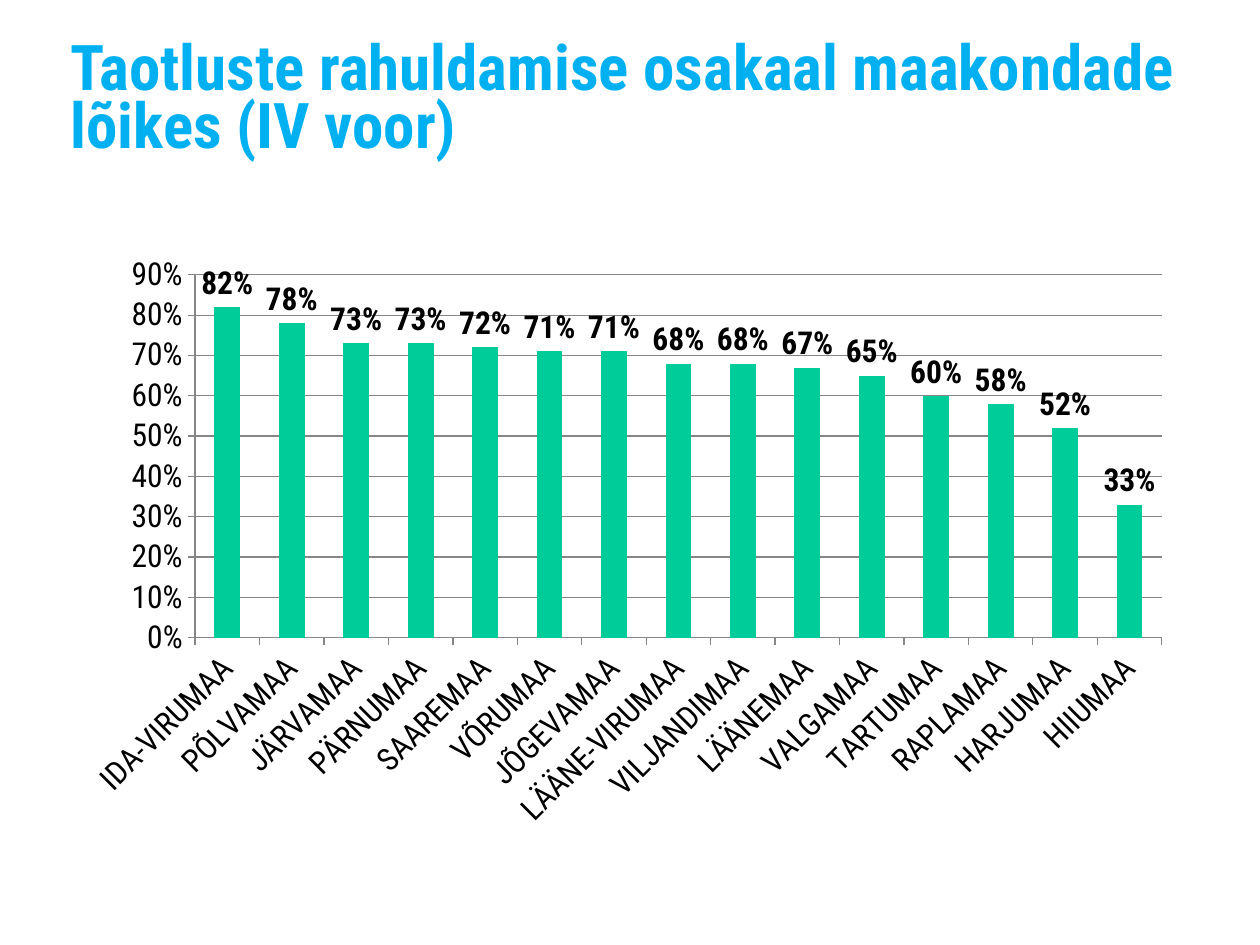
from pptx import Presentation
from pptx.chart.data import CategoryChartData
from pptx.dml.color import RGBColor
from pptx.enum.chart import XL_CHART_TYPE, XL_LABEL_POSITION, XL_TICK_MARK
from pptx.enum.text import MSO_ANCHOR
from pptx.util import Cm, Pt


def colour(hex_code):
    return RGBColor.from_string(hex_code)


class SlideBuilder:
    """Holds the style and the current slide."""

    font_name = "Roboto Condensed"
    heading_colour = "00B0F0"
    text_colour = "000000"
    bar_colour = "00CC99"
    line_colour = "868686"

    def __init__(self, slide):
        self.slide = slide

    def style_font(self, font, size, hex_code, bold=False):
        font.name = self.font_name
        font.size = Pt(size)
        font.bold = bold
        font.color.rgb = colour(hex_code)

    def heading(self, text, left, top, width, height):
        frame = self.slide.shapes.add_textbox(Cm(left), Cm(top), Cm(width), Cm(height)).text_frame
        frame.word_wrap = True
        frame.vertical_anchor = MSO_ANCHOR.MIDDLE
        frame.margin_left = frame.margin_right = frame.margin_top = frame.margin_bottom = 0
        paragraph = frame.paragraphs[0]
        paragraph.text = text
        paragraph.line_spacing = 0.77
        self.style_font(paragraph.font, 36, self.heading_colour, bold=True)

    def style_axis(self, axis):
        axis.major_tick_mark = XL_TICK_MARK.OUTSIDE
        axis.minor_tick_mark = XL_TICK_MARK.NONE
        axis.format.line.color.rgb = colour(self.line_colour)
        self.style_font(axis.tick_labels.font, 18, self.text_colour)

    def column_chart(self, shares, left, top, width, height):
        data = CategoryChartData(number_format="0%")
        data.categories = shares.keys()
        data.add_series("Series 1", [percent / 100 for percent in shares.values()])
        chart = self.slide.shapes.add_chart(
            XL_CHART_TYPE.COLUMN_CLUSTERED, Cm(left), Cm(top), Cm(width), Cm(height), data
        ).chart
        chart.has_legend = False
        chart.has_title = False
        self.style_font(chart.font, 18, self.text_colour)

        counties, scale = chart.category_axis, chart.value_axis
        for axis in (counties, scale):
            self.style_axis(axis)
        counties._element.txPr.bodyPr.set("rot", "-2700000")
        scale.minimum_scale, scale.maximum_scale, scale.major_unit = 0, 0.9, 0.1
        scale.tick_labels.number_format = "0%"
        scale.tick_labels.number_format_is_linked = False
        scale.has_major_gridlines = True
        scale.major_gridlines.format.line.color.rgb = colour(self.line_colour)

        plot = chart.plots[0]
        plot.gap_width = 150
        plot.vary_by_categories = False
        bars = plot.series[0]
        bars.format.fill.solid()
        bars.format.fill.fore_color.rgb = colour(self.bar_colour)
        labels = bars.data_labels
        labels.show_value = True
        labels.number_format = "0%"
        labels.number_format_is_linked = False
        labels.position = XL_LABEL_POSITION.OUTSIDE_END
        self.style_font(labels.font, 18, self.text_colour, bold=True)


def main():
    presentation = Presentation()
    presentation.slide_width, presentation.slide_height = Cm(25.4), Cm(19.05)
    builder = SlideBuilder(presentation.slides.add_slide(presentation.slide_layouts[6]))
    left, width = 1.42, 22.45
    builder.heading(
        "Taotluste rahuldamise osakaal maakondade lõikes (IV voor)", left, 0.3, width, 3.5
    )
    approval_shares = {
        "IDA-VIRUMAA": 82,
        "PÕLVAMAA": 78,
        "JÄRVAMAA": 73,
        "PÄRNUMAA": 73,
        "SAAREMAA": 72,
        "VÕRUMAA": 71,
        "JÕGEVAMAA": 71,
        "LÄÄNE-VIRUMAA": 68,
        "VILJANDIMAA": 68,
        "LÄÄNEMAA": 67,
        "VALGAMAA": 65,
        "TARTUMAA": 60,
        "RAPLAMAA": 58,
        "HARJUMAA": 52,
        "HIIUMAA": 33,
    }
    builder.column_chart(approval_shares, left, 4.93, width, 12)
    presentation.save("out.pptx")


if __name__ == "__main__":
    main()
